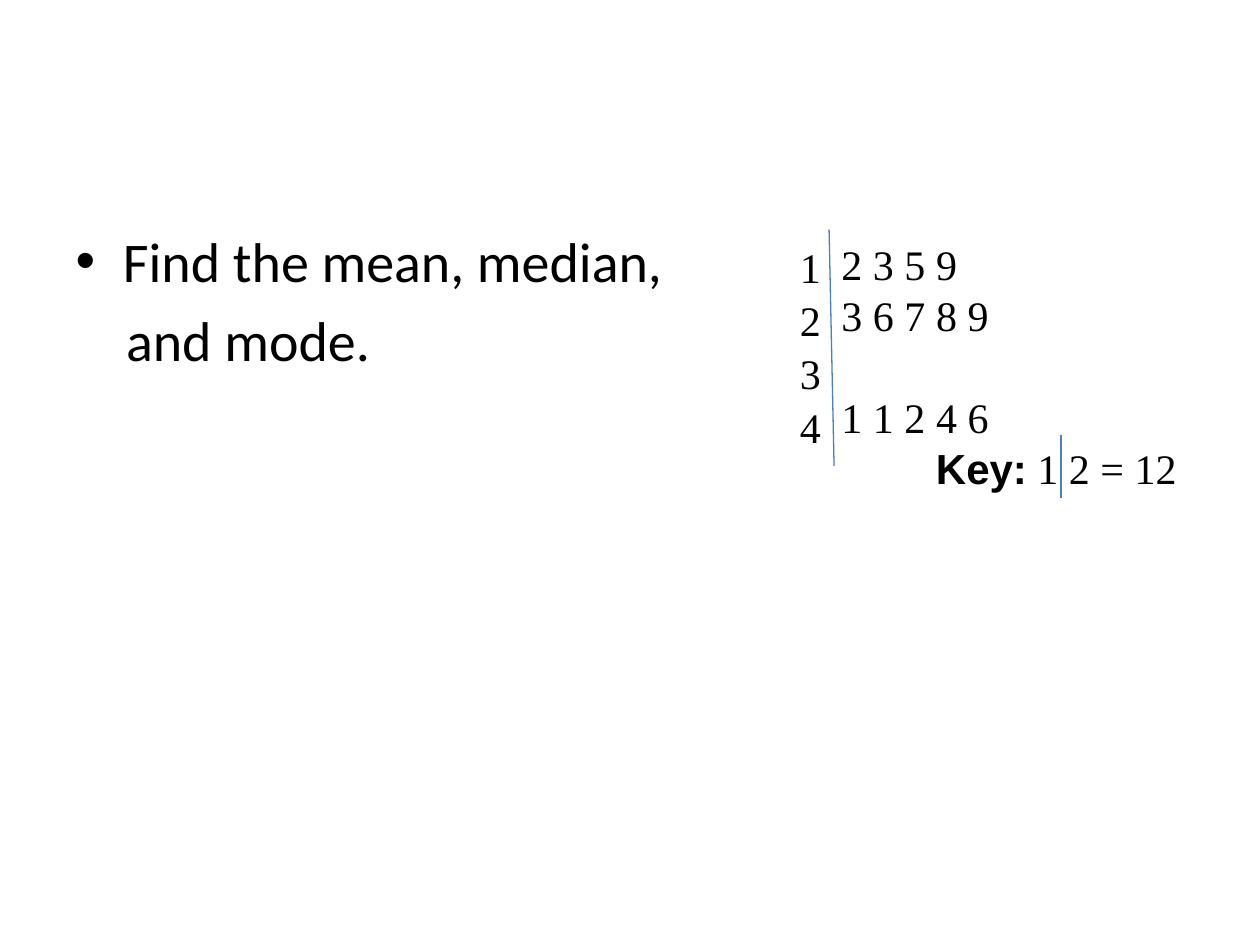
from typing import NamedTuple

from lxml.etree import SubElement
from pptx import Presentation
from pptx.dml.color import RGBColor
from pptx.enum.text import MSO_ANCHOR
from pptx.oxml.ns import qn
from pptx.util import Inches, Pt

BLACK = "000000"
LINE_BLUE = "4B7EBC"
SERIF = "Times New Roman"
PLOT_TOP = 1.82
ROW_HEIGHT = 0.405
BOX_HEIGHT = 0.5
LEAF_LEFT = 6.58


class Span(NamedTuple):
    text: str
    font: str = SERIF
    bold: bool = False


class Label(NamedTuple):
    row: int
    left: float
    width: float
    spans: tuple[Span, ...]


class Rule(NamedTuple):
    start: tuple[float, float]
    end: tuple[float, float]


STEMS = ("1", "2", "3", "4")
LEAVES = (
    Label(0, LEAF_LEFT, 2.55, (Span("2 3 5 9"),)),
    Label(1, LEAF_LEFT, 2.55, (Span("3 6 7 8 9"),)),
    Label(3, LEAF_LEFT, 1.69, (Span("1 1 2 4 6"),)),
)
KEY = Label(4, 7.33, 2.43, (Span("Key:", "Arial", True), Span(" 1 2 = 12")))
RULES = (
    Rule((LEAF_LEFT, PLOT_TOP), (6.62, 3.7)),
    Rule((8.42, 3.45), (8.42, 3.95)),
)


def color(value: str) -> RGBColor:
    return RGBColor.from_string(value)


def format_span(span, font: str, size: int, bold: bool = False) -> None:
    span.font.name = font
    span.font.size = Pt(size)
    span.font.bold = bold
    span.font.color.rgb = color(BLACK)


def add_box(shapes, left: float, top: float, width: float, height: float):
    box = shapes.add_textbox(Inches(left), Inches(top), Inches(width), Inches(height))
    box.text_frame.vertical_anchor = MSO_ANCHOR.TOP
    return box.text_frame


def add_label(shapes, label: Label) -> None:
    top = PLOT_TOP + label.row * ROW_HEIGHT
    frame = add_box(shapes, label.left, top, label.width, BOX_HEIGHT)
    frame.word_wrap = True
    para = frame.paragraphs[0]
    para.line_spacing = 1.06
    for item in label.spans:
        span = para.add_run()
        span.text = item.text
        format_span(span, item.font, 24, item.bold)


def add_stems(shapes) -> None:
    frame = add_box(shapes, 6.25, PLOT_TOP + 0.02, 0.37, len(STEMS) * ROW_HEIGHT + 0.1)
    frame.word_wrap = False
    frame.text = "\n".join(STEMS)
    for para in frame.paragraphs:
        para.line_spacing = 1.06
        format_span(para.runs[0], SERIF, 24)


def add_rule(shapes, rule: Rule) -> None:
    points = [Inches(value) for value in (*rule.start, *rule.end)]
    line = shapes.add_connector(1, *points)
    line.line.color.rgb = color(LINE_BLUE)
    line.line.width = Pt(0.75)
    SubElement(line._element.spPr, qn("a:effectLst"))


def fill_task(body) -> None:
    body.left, body.top = Inches(0.5), Inches(1.75)
    body.width, body.height = Inches(9), Inches(4.95)
    frame = body.text_frame
    frame.text = "Find the mean, median,\nand mode."
    for para in frame.paragraphs:
        format_span(para.runs[0], "Calibri", 32)
    continuation = frame.paragraphs[1]._p.get_or_add_pPr()
    continuation.set("marL", str(Inches(0.4)))
    continuation.set("indent", "0")
    SubElement(continuation, qn("a:buNone"))


def main() -> None:
    deck = Presentation()
    deck.slide_width, deck.slide_height = Inches(10), Inches(7.5)
    page = deck.slides.add_slide(deck.slide_layouts[1])
    title = page.shapes.title._element
    title.getparent().remove(title)
    fill_task(page.placeholders[1])

    plot = page.shapes.add_group_shape().shapes
    add_stems(plot)
    for label in (*LEAVES, KEY):
        add_label(plot, label)
    for rule in RULES:
        add_rule(page.shapes, rule)
    deck.save("out.pptx")


if __name__ == "__main__":
    main()
